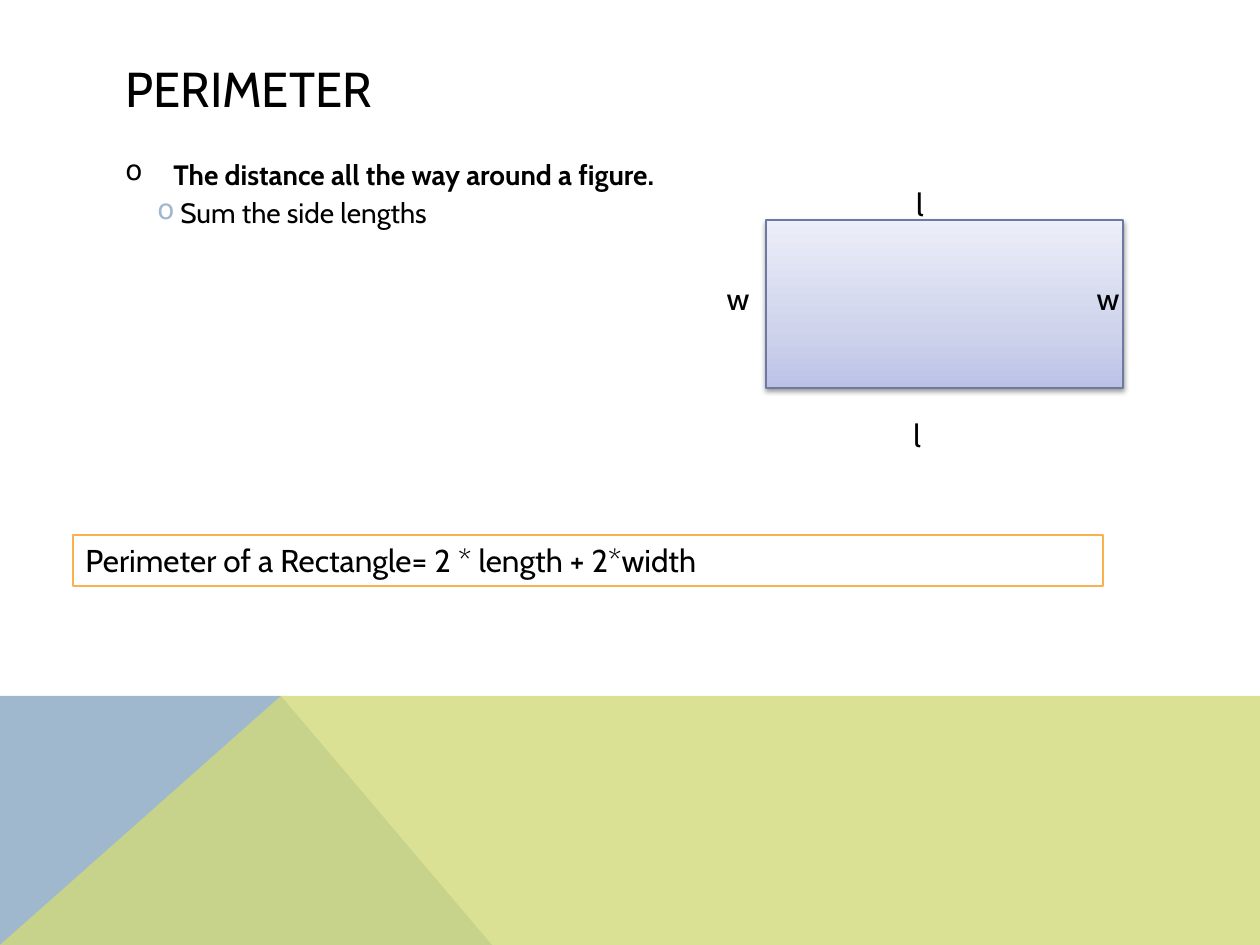
from dataclasses import dataclass

from lxml import etree
from pptx import Presentation
from pptx.dml.color import RGBColor
from pptx.enum.shapes import MSO_SHAPE
from pptx.enum.text import MSO_ANCHOR, PP_ALIGN
from pptx.oxml import parse_xml
from pptx.oxml.ns import nsdecls, qn
from pptx.util import Emu, Pt

RECT = MSO_SHAPE.RECTANGLE
TOP, MIDDLE = MSO_ANCHOR.TOP, MSO_ANCHOR.MIDDLE
LEFT, CENTER = PP_ALIGN.LEFT, PP_ALIGN.CENTER


@dataclass
class Theme:
    font: str = "Cabin"
    text: str = "000000"
    blue: str = "9FB8CD"
    green: str = "D2DA7A"
    figure_line: str = "6E79A1"
    formula_line: str = "F9B050"
    figure_stops: tuple = ((0, "BBC2E6"), (35, "CFD4EC"), (100, "ECEEF8"))
    title_size: int = 28
    body_size: int = 16
    label_size: int = 18


theme = Theme()


def px(n):
    return Emu(round(n * 914400 / 126))


def write(p, text, size=theme.label_size, bold=False, align=LEFT, before=0,
          bullet=None, bullet_color=theme.text, margin=0, hang=0):
    p.alignment = align
    p.line_spacing = 1.0
    p.space_before = Pt(before)
    r = p.add_run()
    r.text = text
    r.font.name = theme.font
    r.font.size = Pt(size)
    r.font.bold = bold
    r.font.color.rgb = RGBColor.from_string(theme.text)
    if bullet:
        pPr = p._p.get_or_add_pPr()
        pPr.set("marL", str(px(margin)))
        pPr.set("indent", str(-px(hang)))
        color = etree.SubElement(pPr, qn("a:buClr"))
        etree.SubElement(color, qn("a:srgbClr"), val=bullet_color)
        etree.SubElement(pPr, qn("a:buChar"), char=bullet)


prs = Presentation()
prs.slide_width, prs.slide_height = px(1260), px(945)
s = prs.slides.add_slide(prs.slide_layouts[5])

# Bottom band: blue slope behind a translucent green one
bands = (
    (theme.blue, 100, ((0, 945), (0, 696), (281, 696), (492, 945))),
    (theme.green, 80, ((0, 945), (281, 696), (1260, 696), (1260, 945))),
)
for color, alpha, points in bands:
    fb = s.shapes.build_freeform(*points[0], scale=914400 / 126)
    fb.add_line_segments(points[1:], close=True)
    sp = fb.convert_to_shape()
    sp.shadow.inherit = False
    sp.fill.solid()
    sp.fill.fore_color.rgb = RGBColor.from_string(color)
    sp.line.fill.background()
    if alpha < 100:
        clr = sp._element.spPr.find(qn("a:solidFill")).find(qn("a:srgbClr"))
        etree.SubElement(clr, qn("a:alpha"), val=str(alpha * 1000))

# Title
title = s.shapes.title
title.left, title.top, title.width, title.height = px(113), px(50), px(1036), px(76)
title.text_frame.vertical_anchor = MIDDLE
write(title.text_frame.paragraphs[0], "PERIMETER", size=theme.title_size)

# Definition
tf = s.shapes.add_textbox(px(113), px(151), px(1036), px(493)).text_frame
tf.word_wrap = True
write(tf.paragraphs[0], "The distance all the way around a figure.", size=theme.body_size,
      bold=True, before=8, bullet="o", margin=48, hang=48)
write(tf.add_paragraph(), "Sum the side lengths", size=theme.body_size,
      before=3, bullet="o", bullet_color=theme.blue, margin=55, hang=23)

# Rectangle figure with gradient and soft shadow
sp = s.shapes.add_shape(RECT, px(766), px(220), px(357), px(168))
sp.fill.gradient()
sp.fill.gradient_angle = 90
stops = sp._element.spPr.find(qn("a:gradFill")).find(qn("a:gsLst"))
for stop in list(stops):
    stops.remove(stop)
for pos, color in theme.figure_stops:
    stop = etree.SubElement(stops, qn("a:gs"), pos=str(pos * 1000))
    etree.SubElement(stop, qn("a:srgbClr"), val=color)
sp.line.color.rgb = RGBColor.from_string(theme.figure_line)
sp.line.width = Pt(0.75)
sp.shadow.inherit = False
sp._element.spPr.find(qn("a:effectLst")).append(parse_xml(
    f'<a:outerShdw {nsdecls("a")} blurRad="40000" dist="20000" dir="5400000" rotWithShape="0">'
    '<a:srgbClr val="000000"><a:alpha val="38000"/></a:srgbClr></a:outerShdw>'))

# Side labels, centred on x
for text, x, y in (("w", 738, 273), ("w", 1108, 273), ("l", 920, 179), ("l", 917, 410)):
    tf = s.shapes.add_textbox(px(x - 30), px(y), px(60), px(50)).text_frame
    tf.word_wrap = True
    write(tf.paragraphs[0], text, align=CENTER)

# Formula box
sp = s.shapes.add_shape(RECT, px(73), px(535), px(1030), px(51))
sp.shadow.inherit = False
sp.fill.background()
sp.line.color.rgb = RGBColor.from_string(theme.formula_line)
sp.line.width = Pt(0.75)
tf = sp.text_frame
tf.word_wrap = True
tf.vertical_anchor = TOP
write(tf.paragraphs[0], "Perimeter of a Rectangle= 2 * length + 2*width")

prs.save("out.pptx")
